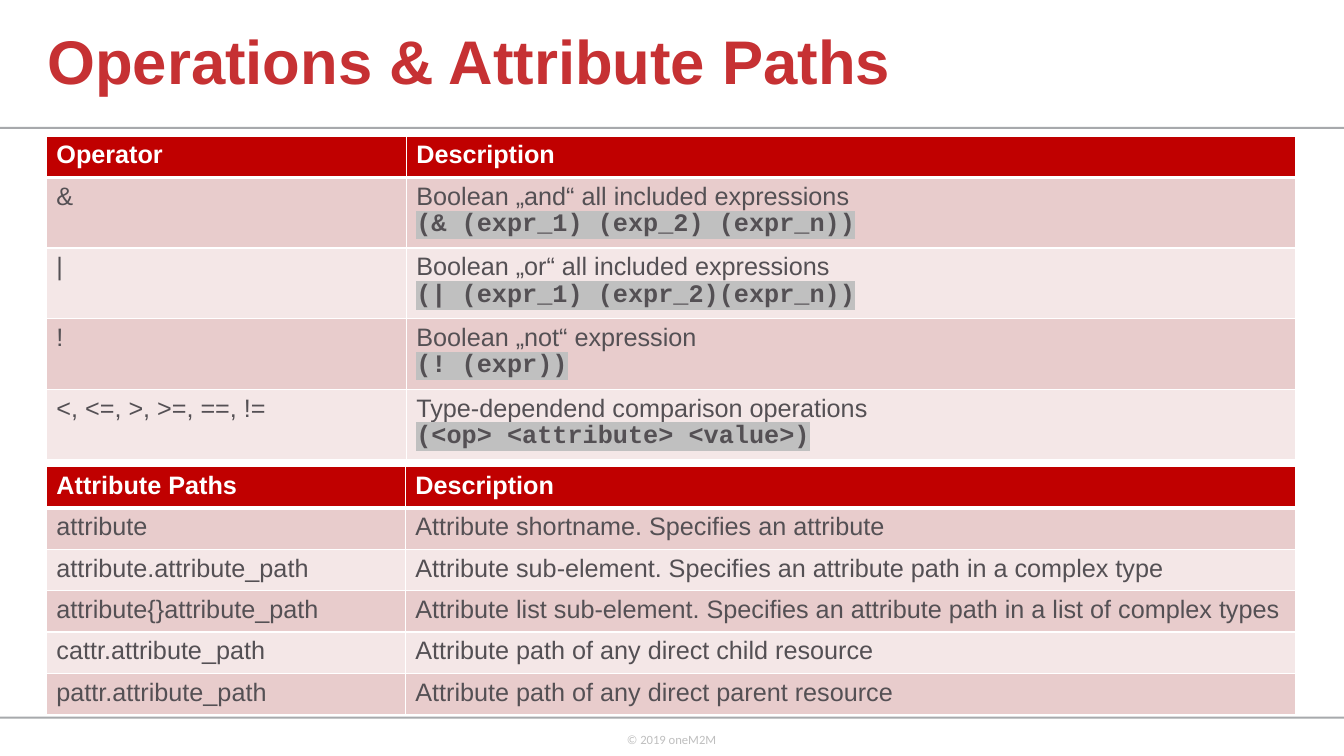
from dataclasses import dataclass

from lxml.etree import SubElement
from pptx import Presentation
from pptx.dml.color import RGBColor
from pptx.enum.shapes import MSO_SHAPE
from pptx.enum.text import MSO_ANCHOR, MSO_AUTO_SIZE, PP_ALIGN
from pptx.oxml import parse_xml
from pptx.oxml.ns import nsdecls, qn
from pptx.slide import Slide
from pptx.table import _Cell
from pptx.text.text import Font
from pptx.util import Inches, Pt

COLORS = {
    "title": "C63133",
    "header": "C00000",
    "odd": "E8CCCC",
    "even": "F4E7E7",
    "text": "545054",
    "code": "C0C0C0",
    "rule": "A7A9AC",
    "footer": "BFBFBF",
    "white": "FFFFFF",
}
ROW_HEIGHT = 0.41


@dataclass
class TableSpec:
    top: float
    height: float
    columns: tuple[float, float]
    rows: list[tuple[str, str]]


TABLES = [
    TableSpec(1.35, 3.21, (3.57, 8.82), [
        ("Operator", "Description"),
        ("&", "Boolean „and“ all included expressions\n(& (expr_1) (exp_2) (expr_n))"),
        ("|", "Boolean „or“ all included expressions\n(| (expr_1) (expr_2)(expr_n))"),
        ("!", "Boolean „not“ expression\n(! (expr))"),
        ("<, <=, >, >=, ==, !=", "Type-dependend comparison operations\n(<op> <attribute> <value>)"),
    ]),
    TableSpec(4.63, 2.46, (3.56, 8.83), [
        ("Attribute Paths", "Description"),
        ("attribute", "Attribute shortname. Specifies an attribute"),
        ("attribute.attribute_path",
         "Attribute sub-element. Specifies an attribute path in a complex type"),
        ("attribute{}attribute_path",
         "Attribute list sub-element. Specifies an attribute path in a list of complex types"),
        ("cattr.attribute_path", "Attribute path of any direct child resource"),
        ("pattr.attribute_path", "Attribute path of any direct parent resource"),
    ]),
]


def rgb(name: str) -> RGBColor:
    return RGBColor.from_string(COLORS[name])


def set_font(font: Font, name: str, size: float, color: str, bold: bool = False) -> None:
    font.name = name
    font.size = Pt(size)
    font.bold = bold
    font.color.rgb = rgb(color)


def add_rule(s: Slide, top: float) -> None:
    sp = s.shapes.add_shape(MSO_SHAPE.RECTANGLE, 0, Inches(top), Inches(13.33), Inches(0.02))
    sp.shadow.inherit = False
    sp.fill.solid()
    sp.fill.fore_color.rgb = rgb("rule")
    sp.line.fill.background()


def set_borders(cell: _Cell, top: float, bottom: float) -> None:
    tcPr = cell._tc.get_or_add_tcPr()
    for side, width in {"L": 1, "R": 1, "T": top, "B": bottom}.items():
        tcPr.append(parse_xml(
            f'<a:ln{side} {nsdecls("a")} w="{Pt(width)}"><a:solidFill>'
            f'<a:srgbClr val="{COLORS["white"]}"/></a:solidFill></a:ln{side}>'))


def fill_cell(cell: _Cell, text: str, row: int) -> None:
    header = row == 0
    set_borders(cell, 3 if row == 1 else 1, 3 if header else 1)
    cell.fill.solid()
    cell.fill.fore_color.rgb = rgb("header" if header else "odd" if row % 2 else "even")
    cell.text_frame.text = text
    for line, p in enumerate(cell.text_frame.paragraphs):
        code = line == 1
        r = p.runs[0]
        set_font(r.font, "Courier New" if code else "Arial", 18,
                 "white" if header else "text", header or code)
        if code:
            rPr = r._r.get_or_add_rPr()
            highlight = SubElement(rPr, qn("a:highlight"))
            SubElement(highlight, qn("a:srgbClr"), val=COLORS["code"])
            rPr.find(qn("a:solidFill")).addnext(highlight)


def add_spec_table(s: Slide, spec: TableSpec) -> None:
    frame = s.shapes.add_table(len(spec.rows), 2, Inches(0.46), Inches(spec.top),
                               Inches(12.39), Inches(spec.height))
    table = frame.table
    for column, width in zip(table.columns, spec.columns):
        column.width = Inches(width)
    for i, texts in enumerate(spec.rows):
        table.rows[i].height = Inches(ROW_HEIGHT)
        for j, text in enumerate(texts):
            fill_cell(table.cell(i, j), text, i)
    frame.height = Inches(spec.height)


def add_title(s: Slide, text: str) -> None:
    title = s.shapes.title
    title.left, title.top = Inches(0.37), Inches(0)
    title.width, title.height = Inches(9.16), Inches(1.28)
    tf = title.text_frame
    tf.text = text
    tf.vertical_anchor = MSO_ANCHOR.MIDDLE
    p = tf.paragraphs[0]
    p.alignment = PP_ALIGN.LEFT
    p.line_spacing = 0.9
    set_font(p.runs[0].font, "Arial", 44, "title", True)


def add_footer(s: Slide, text: str) -> None:
    sp = s.shapes.add_textbox(Inches(6.12), Inches(7.21), Inches(1.1), Inches(0.4))
    tf = sp.text_frame
    tf.text = text
    tf.word_wrap = False
    tf.auto_size = MSO_AUTO_SIZE.SHAPE_TO_FIT_TEXT
    set_font(tf.paragraphs[0].runs[0].font, "Calibri", 9, "footer")


def main() -> None:
    prs = Presentation()
    prs.slide_width, prs.slide_height = Inches(13.33), Inches(7.5)
    s = prs.slides.add_slide(prs.slide_layouts[5])
    for top in (1.26, 7.11):
        add_rule(s, top)
    add_footer(s, "© 2019 oneM2M")
    add_title(s, "Operations & Attribute Paths")
    for spec in TABLES:
        add_spec_table(s, spec)
    prs.save("out.pptx")


if __name__ == "__main__":
    main()
